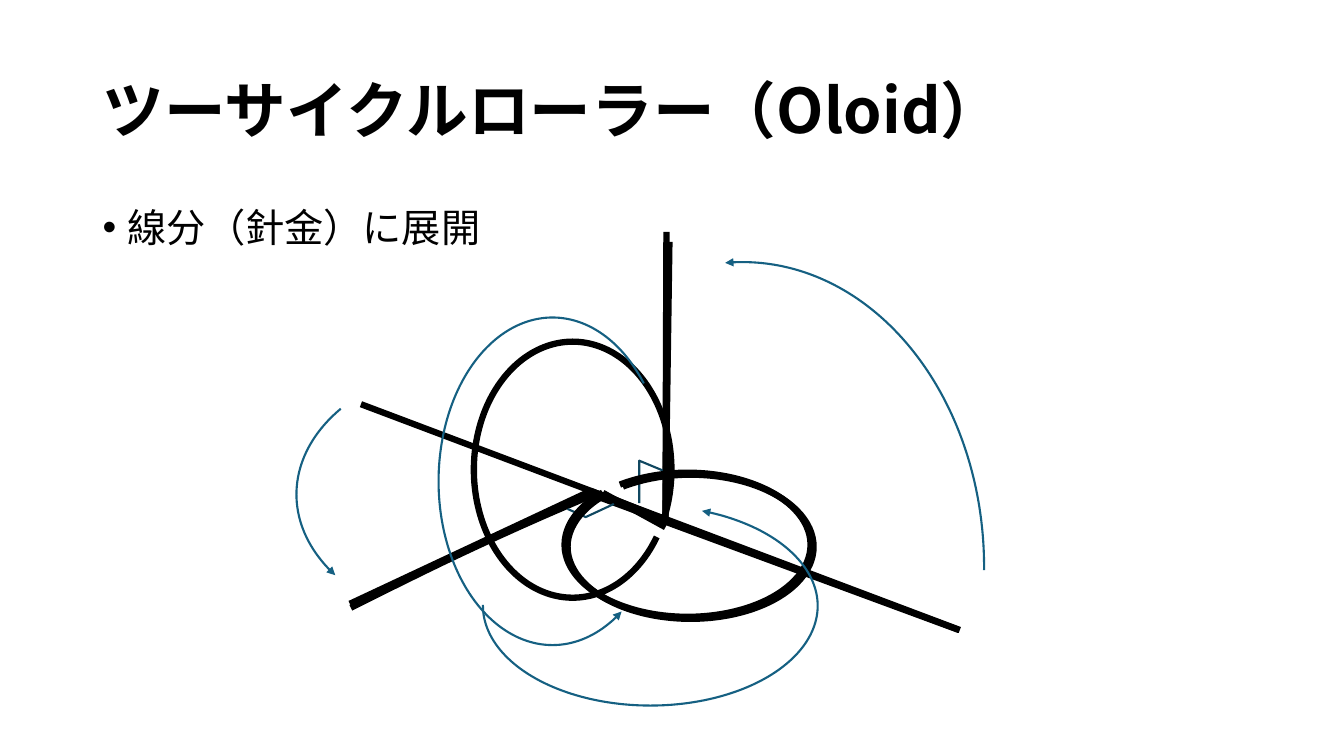
from lxml import etree
from pptx import Presentation
from pptx.dml.color import RGBColor
from pptx.enum.shapes import MSO_CONNECTOR as CONNECTOR, MSO_SHAPE as SHAPE
from pptx.enum.text import MSO_ANCHOR as ANCHOR, MSO_AUTO_SIZE as AUTO_SIZE, PP_ALIGN as ALIGN
from pptx.oxml.ns import qn
from pptx.util import Inches, Pt

# Content
TITLE = "ツーサイクルローラー（Oloid）"
BULLET = "線分（針金）に展開"
FONT = "Noto Sans CJK JP"
COLORS = {"wire": "000000", "turn": "156082", "corner": "104760"}
WIRE, THIN = 4.5, 1.5  # line widths in points

# Arcs: (left, top, width, height), start and end in degrees clockwise from the right
LEFT_TURN = ((2.94, 3.6, 3.65, 2.61), 150.89, 211.53)
RIGHT_TURN = ((4.97, 2.6, 4.79, 6.05), 266.72, 0.74)
FLAT_TURN = ((4.79, 5.02, 3.32, 1.98), 298.55, 180.35)
UPRIGHT_TURN = ((4.35, 3.15, 2.26, 3.25), 62.05, 313.01)
FLAT_RING = ((5.63, 4.71, 2.44, 1.43), 221.64, 211.53)
FLAT_RING_BACK = ((5.6, 4.69, 2.44, 1.43), 221.64, 211.53)
UPRIGHT_RING = ((4.7, 3.39, 1.96, 2.54), 38.65, 31.08)

# Wires and right-angle marks
AXIS = ((3.58, 4.01), (9.52, 6.25))
HUB = ((5.98, 4.89), (6.6, 5.23))
BENT_CURVE = ((3.48, 6.03), (4.28, 5.63), (4.8, 5.37), (5.88, 4.91))
BENT_END = (9.51, 6.25)
FOLDED_WIRE = [(3.47, 5.99), (5.86, 4.87), (6.6, 5.16), (6.61, 2.3)]
UPRIGHT_WIRE = [(6.01, 4.92), (6.6, 5.16), (6.64, 2.4)]
FLAT_CORNER = [(6.09, 5), (5.81, 5.13), (5.63, 5.05)]
UPRIGHT_CORNER = [(6.34, 4.99), (6.34, 4.57), (6.58, 4.67)]


def style_line(line, color, width):
    line.color.rgb = RGBColor.from_string(COLORS[color])
    line.width = Pt(width)


def add_arc(shapes, arc, arrow=False):
    box, start, end = arc
    shape = shapes.add_shape(SHAPE.ARC, *map(Inches, box))
    shape.shadow.inherit = False
    shape.fill.background()
    # An adjustment of 1 stands for 100000 units; a degree has 60000
    shape.adjustments[0], shape.adjustments[1] = start * 0.6, end * 0.6
    style_line(shape.line, "turn" if arrow else "wire", THIN if arrow else WIRE)
    if arrow:
        etree.SubElement(shape.line._get_or_add_ln(), qn("a:headEnd"), type="triangle")


def add_path(shapes, points, color="wire", width=WIRE):
    corners = [(Inches(x), Inches(y)) for x, y in points]
    builder = shapes.build_freeform(*corners[0])
    builder.add_line_segments(corners[1:], close=False)
    shape = builder.convert_to_shape()
    shape.shadow.inherit = False
    shape.fill.background()
    style_line(shape.line, color, width)


def add_wire(shapes, ends):
    (x1, y1), (x2, y2) = ends
    wire = shapes.add_connector(CONNECTOR.STRAIGHT, Inches(x1), Inches(y1), Inches(x2), Inches(y2))
    style_line(wire.line, "wire", WIRE)
    etree.SubElement(wire._element.spPr, qn("a:effectLst"))


def bezier_points(controls, steps=12):
    weights = (1, 3, 3, 1)
    return [
        tuple(
            sum(w * (1 - t) ** (3 - i) * t**i * controls[i][axis] for i, w in enumerate(weights))
            for axis in (0, 1)
        )
        for t in (step / steps for step in range(steps + 1))
    ]


def write_text(shape, text, size, bold):
    frame = shape.text_frame
    frame.word_wrap = True
    frame.auto_size = AUTO_SIZE.NONE
    paragraph = frame.paragraphs[0]
    run = paragraph.add_run()
    run.text = text
    paragraph.alignment = ALIGN.LEFT
    paragraph.line_spacing = 0.9
    font = run.font
    font.name, font.size, font.bold = FONT, Pt(size), bold
    font.color.rgb = RGBColor.from_string(COLORS["wire"])
    etree.SubElement(run._r.get_or_add_rPr(), qn("a:ea"), typeface=FONT)
    return paragraph


def main():
    presentation = Presentation()
    presentation.slide_width, presentation.slide_height = Inches(13.33), Inches(7.5)
    slide = presentation.slides.add_slide(presentation.slide_layouts[5])
    shapes = slide.shapes

    # Title
    title = shapes.title
    title.left, title.top, title.width, title.height = map(Inches, (0.92, 0.4, 11.5, 1.45))
    title.text_frame.vertical_anchor = ANCHOR.MIDDLE
    write_text(title, TITLE, 44, True)

    # Bullet
    body = shapes.add_textbox(*map(Inches, (0.92, 2.02, 11.5, 4.76)))
    paragraph = write_text(body, BULLET, 28, False)
    paragraph.space_before = Pt(10)
    properties = paragraph._p.get_or_add_pPr()
    properties.set("marL", str(Inches(0.25)))
    properties.set("indent", str(-Inches(0.25)))
    etree.SubElement(properties, qn("a:buFont"), typeface="Arial")
    etree.SubElement(properties, qn("a:buChar"), char="•")

    # Unrolled wires, their turns and right-angle marks
    add_wire(shapes, AXIS)
    add_path(shapes, bezier_points(BENT_CURVE) + [BENT_END])
    add_arc(shapes, LEFT_TURN, arrow=True)
    add_path(shapes, FLAT_CORNER, "corner", THIN)
    add_path(shapes, FOLDED_WIRE)
    add_arc(shapes, RIGHT_TURN, arrow=True)
    add_path(shapes, UPRIGHT_CORNER, "corner", THIN)

    # Flat ring with its upright wire
    flat_group = shapes.add_group_shape().shapes
    add_arc(flat_group, FLAT_RING)
    add_path(flat_group, UPRIGHT_WIRE)

    # Both rings joined at the hub
    ring_group = shapes.add_group_shape().shapes
    add_arc(ring_group, UPRIGHT_RING)
    add_arc(ring_group, FLAT_RING_BACK)
    add_wire(ring_group, HUB)

    # Turns of the rings
    add_arc(shapes, FLAT_TURN, arrow=True)
    add_arc(shapes, UPRIGHT_TURN, arrow=True)

    presentation.save("out.pptx")


if __name__ == "__main__":
    main()
